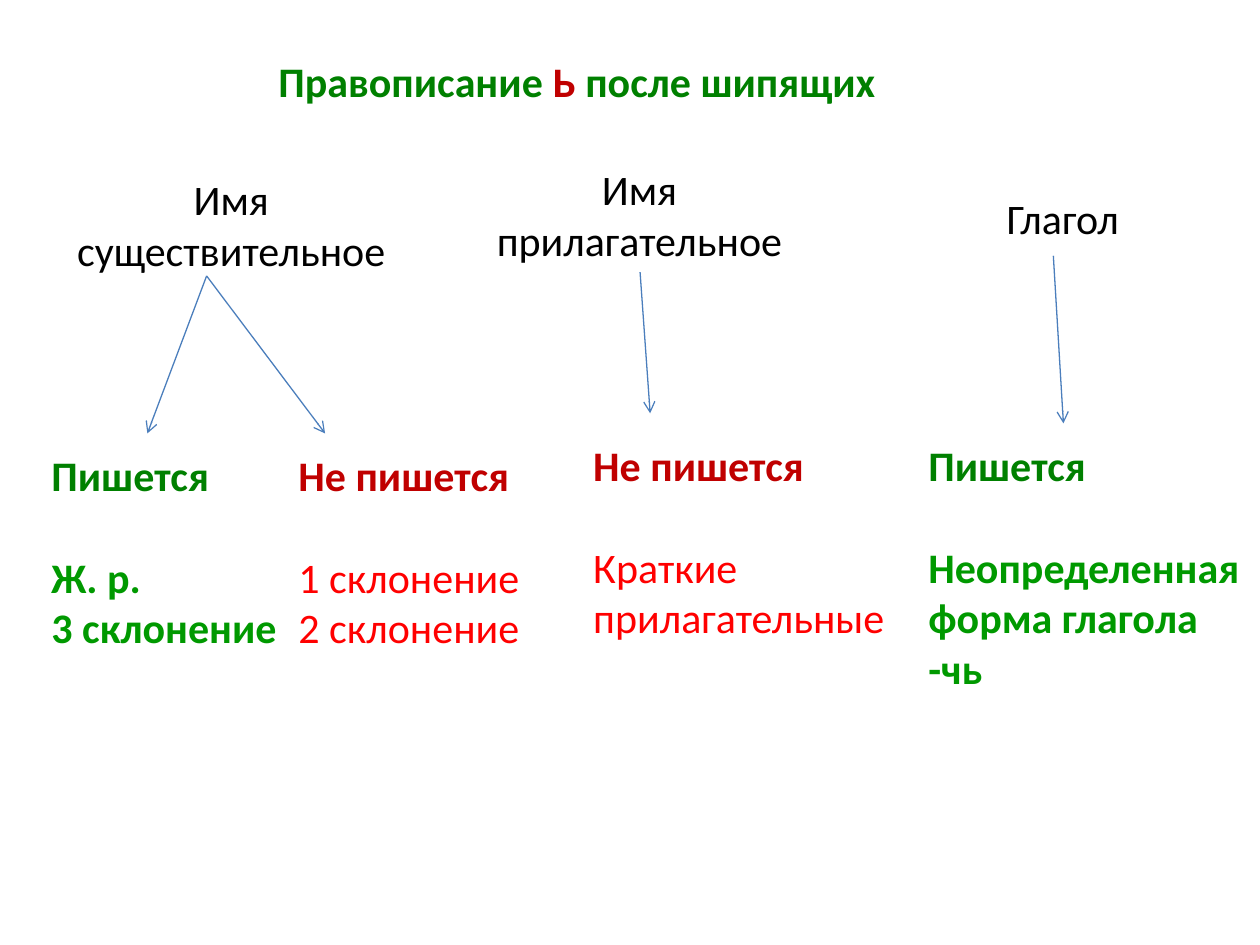
from pptx import Presentation, util as u
from pptx.dml.color import RGBColor
from pptx.enum import shapes, text
from pptx.oxml.ns import qn
from lxml import etree

COLORS = {"green": "008000", "leaf": "009900", "dark": "C00000",
          "red": "FF0000", "ink": "000000", "line": "4B7EBC"}
LEFT, MID = text.PP_ALIGN.LEFT, text.PP_ALIGN.CENTER


class Board:
    """Holds the text style and the slide being built."""
    font = {"name": "Calibri", "size": u.Pt(24)}
    frame = {"word_wrap": True, "vertical_anchor": text.MSO_ANCHOR.TOP,
             "auto_size": text.MSO_AUTO_SIZE.SHAPE_TO_FIT_TEXT}
    gap = u.Pt(29.3)  # one line of text

    def __init__(self, slide):
        self.slide = slide

    def put(self, par, words, color, bold):
        """Adds a styled run to a paragraph."""
        run = par.add_run()
        run.text = words
        for key, val in {**self.font, "bold": bold}.items():
            setattr(run.font, key, val)
        run.font.color.rgb = RGBColor.from_string(COLORS[color])

    def setup(self, shape, align):
        """Applies the frame style and returns the first paragraph."""
        for key, val in self.frame.items():
            setattr(shape.text_frame, key, val)
        par = shape.text_frame.paragraphs[0]
        par.alignment = align
        return par

    def box(self, place, align=LEFT):
        shape = self.slide.shapes.add_textbox(*map(u.Inches, place))
        return shape.text_frame, self.setup(shape, align)

    def title(self, place, runs):
        shape = self.slide.shapes.title
        for key, val in zip(("left", "top", "width", "height"), place):
            setattr(shape, key, u.Inches(val))
        par = self.setup(shape, LEFT)
        for words, color in runs:
            self.put(par, words, color, True)

    def label(self, place, words, align):
        par = self.box(place, align)[1]
        self.put(par, words, "ink", False)

    def rule(self, place, yes, lines):
        """Adds a verdict with its cases one line below."""
        frame, par = self.box(place)
        head, tone = ("Пишется", "green") if yes else ("Не пишется", "dark")
        self.put(par, head, tone, True)
        for num, words in enumerate(lines):
            par = frame.add_paragraph()
            if num == 0:
                par.space_before = self.gap
            self.put(par, words, "leaf" if yes else "red", yes)

    def arrow(self, start, end):
        link = self.slide.shapes.add_connector(
            shapes.MSO_CONNECTOR.STRAIGHT, *map(u.Inches, start + end))
        link.line.width = u.Pt(0.75)
        link.line.color.rgb = RGBColor.from_string(COLORS["line"])
        props = link.element.spPr
        etree.SubElement(props.find(qn("a:ln")), qn("a:tailEnd"), type="arrow")
        etree.SubElement(props, qn("a:effectLst"))


def main():
    deck = Presentation()
    deck.slide_width, deck.slide_height = u.Inches(10), u.Inches(7.5)
    board = Board(deck.slides.add_slide(deck.slide_layouts[5]))

    board.title((2.11, 0.39, 6.88, 0.5), [
        ("Правописание ", "green"), ("Ь ", "dark"), ("после шипящих", "green")])

    for place, words, align in [
            ((0.39, 1.33, 2.89, 0.91), "Имя существительное", MID),
            ((3.67, 1.25, 2.81, 0.91), "Имя прилагательное", MID),
            ((7.89, 1.48, 1.33, 0.5), "Глагол", LEFT)]:
        board.label(place, words, align)

    for place, yes, lines in [
            ((0.31, 3.52, 2.11, 1.72), True, ["Ж. р.", "3 склонение"]),
            ((2.27, 3.52, 2.11, 1.72), False, ["1 склонение 2 склонение"]),
            ((4.61, 3.44, 2.58, 1.72), False, ["Краткие прилагательные"]),
            ((7.27, 3.44, 2.73, 2.12), True, ["Неопределенная форма глагола -чь"])]:
        board.rule(place, yes, lines)

    noun = (1.64, 2.19)
    for start, end in [(noun, (1.17, 3.44)), (noun, (2.58, 3.44)),
                       ((5.08, 2.16), (5.16, 3.28)),
                       ((8.36, 2.03), (8.44, 3.36))]:
        board.arrow(start, end)

    deck.save("out.pptx")


if __name__ == "__main__":
    main()
